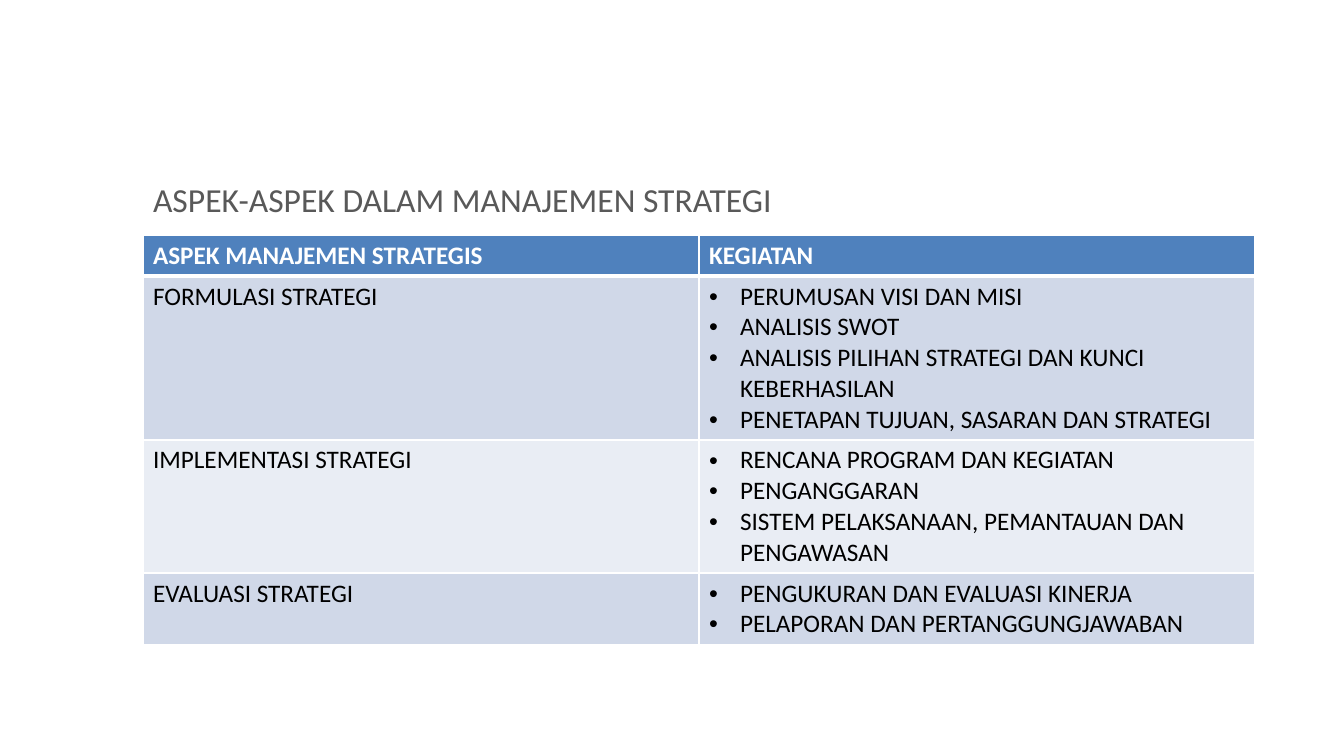
from lxml import etree
from pptx import Presentation
from pptx.dml.color import RGBColor
from pptx.enum.text import MSO_ANCHOR, PP_ALIGN
from pptx.oxml.ns import qn
from pptx.util import Pt

PX = 914400 / 100.8
LEFT, BOTTOM = PP_ALIGN.LEFT, MSO_ANCHOR.BOTTOM

WHITE = RGBColor(0xFF, 0xFF, 0xFF)
BLACK = RGBColor(0x00, 0x00, 0x00)
GREY = RGBColor(0x59, 0x59, 0x59)
HEADER_BLUE = RGBColor(0x4F, 0x81, 0xBD)
BAND_DARK = RGBColor(0xD0, 0xD8, 0xE8)
BAND_LIGHT = RGBColor(0xE9, 0xED, 0xF4)

TITLE_FORMAT = {"name": "Calibri", "size": Pt(24), "bold": False}
HEADER_FORMAT = {"name": "Calibri", "size": Pt(18), "bold": True}
BODY_FORMAT = {"name": "Calibri", "size": Pt(18), "bold": False}

HEADINGS = ("ASPEK MANAJEMEN STRATEGIS", "KEGIATAN")
ASPECTS = [
    ("FORMULASI STRATEGI", [
        "PERUMUSAN VISI DAN MISI",
        "ANALISIS SWOT",
        "ANALISIS PILIHAN STRATEGI DAN KUNCI KEBERHASILAN",
        "PENETAPAN TUJUAN, SASARAN DAN STRATEGI",
    ]),
    ("IMPLEMENTASI STRATEGI", [
        "RENCANA PROGRAM DAN KEGIATAN",
        "PENGANGGARAN",
        "SISTEM PELAKSANAAN, PEMANTAUAN DAN PENGAWASAN",
    ]),
    ("EVALUASI STRATEGI", [
        "PENGUKURAN DAN EVALUASI KINERJA",
        "PELAPORAN DAN PERTANGGUNGJAWABAN",
    ]),
]
ROW_HEIGHTS = (41, 163, 132, 70)
COLUMN_WIDTH = 556
BULLET_INDENT = 31


def px(length):
    return round(length * PX)


def apply_font(font, values, color):
    for name, value in values.items():
        setattr(font, name, value)
    font.color.rgb = color


def add_bullet(paragraph):
    properties = paragraph._p.get_or_add_pPr()
    properties.set("marL", str(px(BULLET_INDENT)))
    properties.set("indent", str(-px(BULLET_INDENT)))
    etree.SubElement(properties, qn("a:buFont"), typeface="Arial")
    etree.SubElement(properties, qn("a:buChar"), char="•")


def set_borders(cell, bottom_width):
    properties = cell._tc.get_or_add_tcPr()
    widths = {"lnL": 1, "lnR": 1, "lnT": 1, "lnB": bottom_width}
    for position, (tag, width) in enumerate(widths.items()):
        line = etree.Element(qn(f"a:{tag}"), w=str(Pt(width)))
        fill = etree.SubElement(line, qn("a:solidFill"))
        etree.SubElement(fill, qn("a:srgbClr"), val=str(WHITE))
        properties.insert(position, line)


def fill_cell(cell, lines, values, color, background, bulleted=False, bottom_width=1):
    cell.fill.solid()
    cell.fill.fore_color.rgb = background
    set_borders(cell, bottom_width)
    cell.text = "\n".join(lines)
    for paragraph in cell.text_frame.paragraphs:
        if bulleted:
            add_bullet(paragraph)
        apply_font(paragraph.font, values, color)


def add_title(slide, text):
    title = slide.shapes.title
    box = {"left": 143, "top": 171, "width": 1111, "height": 48}
    for name, value in box.items():
        setattr(title, name, px(value))
    frame = title.text_frame
    frame.text = text
    frame.word_wrap = True
    frame.vertical_anchor = BOTTOM
    frame.margin_top = frame.margin_bottom = 0
    paragraph = frame.paragraphs[0]
    paragraph.alignment = LEFT
    apply_font(paragraph.font, TITLE_FORMAT, GREY)


def add_aspect_table(slide):
    table = slide.shapes.add_table(
        len(ROW_HEIGHTS), len(HEADINGS), px(143), px(235),
        px(COLUMN_WIDTH * len(HEADINGS)), px(sum(ROW_HEIGHTS))).table
    for column in table.columns:
        column.width = px(COLUMN_WIDTH)
    for row, height in zip(table.rows, ROW_HEIGHTS):
        row.height = px(height)

    # Header row
    for column, heading in enumerate(HEADINGS):
        fill_cell(table.cell(0, column), [heading], HEADER_FORMAT, WHITE,
                  HEADER_BLUE, bottom_width=3)

    # Banded rows
    for row, (aspect, activities) in enumerate(ASPECTS, start=1):
        band = BAND_DARK if row % 2 else BAND_LIGHT
        fill_cell(table.cell(row, 0), [aspect], BODY_FORMAT, BLACK, band)
        fill_cell(table.cell(row, 1), activities, BODY_FORMAT, BLACK, band, bulleted=True)
    # Keep the rule under the header thick
    for cell in table.rows[1].cells:
        cell._tc.tcPr.find(qn("a:lnT")).set("w", str(Pt(3)))


def main():
    presentation = Presentation()
    presentation.slide_width = px(1344)
    presentation.slide_height = px(756)
    slide = presentation.slides.add_slide(presentation.slide_layouts[5])
    add_title(slide, "ASPEK-ASPEK DALAM MANAJEMEN STRATEGI")
    add_aspect_table(slide)
    presentation.save("out.pptx")


if __name__ == "__main__":
    main()
